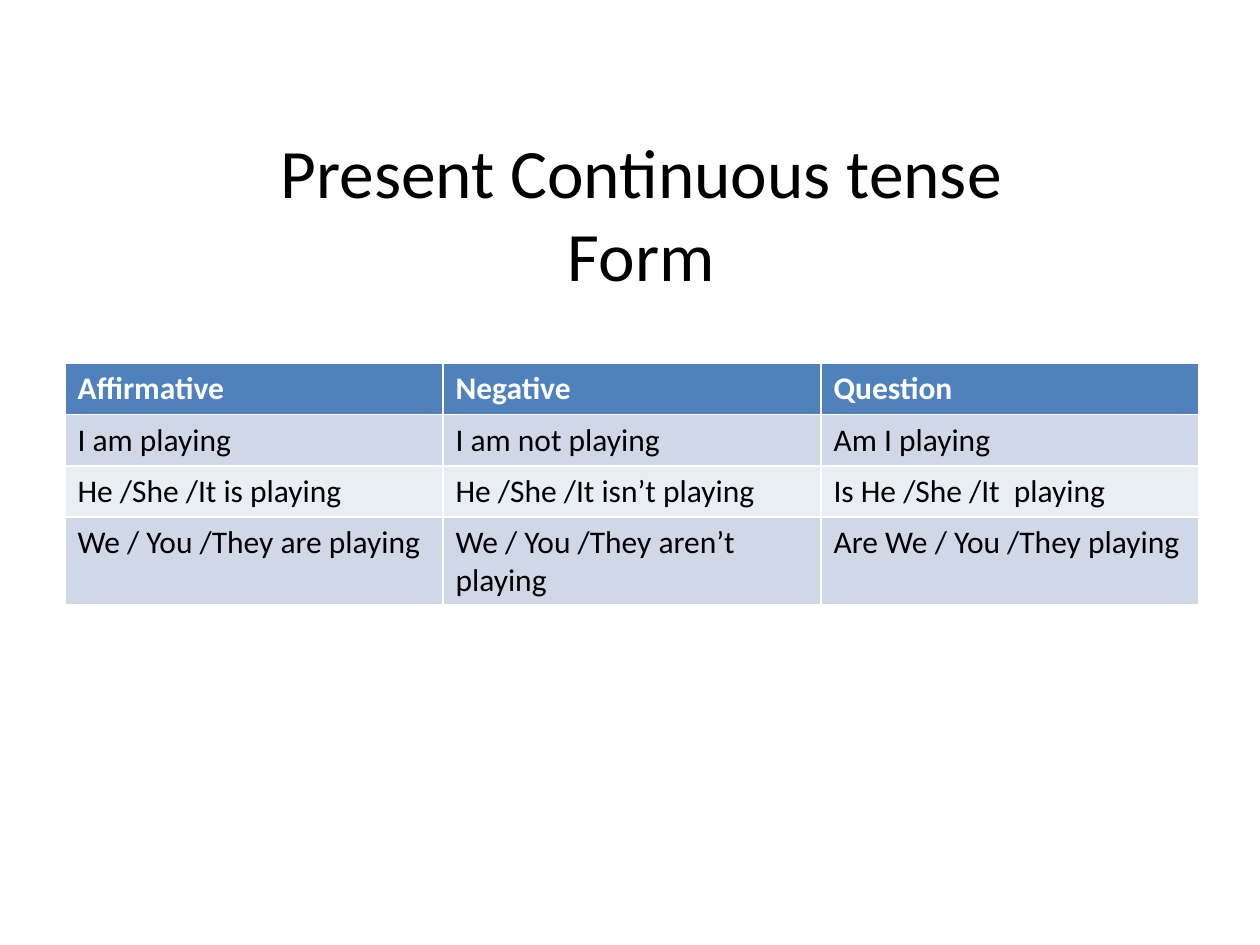
from dataclasses import dataclass

from pptx import Presentation
from pptx.dml.color import RGBColor
from pptx.enum.text import MSO_ANCHOR, PP_ALIGN
from pptx.util import Cm, Pt

TITLE = ["Present Continuous tense", "Form"]
ROWS = [
    ("Affirmative", "Negative", "Question"),
    ("I am playing", "I am not playing", "Am I playing"),
    ("He /She /It is playing", "He /She /It isn’t playing", "Is He /She /It  playing"),
    ("We / You /They are playing", "We / You /They aren’t playing",
     "Are We / You /They playing"),
]


@dataclass(frozen=True)
class Theme:
    font: str = "Calibri"
    title: float = 39.6
    body: float = 18
    ink: str = "000000"
    white: str = "FFFFFF"
    head: str = "4F81BD"
    bands: tuple = ("E9EDF4", "D0D8E8")


THEME = Theme()


def style(frame, size, color, bold=False):
    for para in frame.paragraphs:
        for run in para.runs:
            run.font.name = THEME.font
            run.font.size = Pt(size)
            run.font.bold = bold
            run.font.color.rgb = RGBColor.from_string(color)


def add_title(slide):
    box = slide.shapes.add_textbox(Cm(1.5), Cm(2.45), Cm(22.86), Cm(3.65))
    frame = box.text_frame
    frame.word_wrap = True
    frame.vertical_anchor = MSO_ANCHOR.MIDDLE
    frame.text = "\n".join(TITLE)
    for para in frame.paragraphs:
        para.alignment = PP_ALIGN.CENTER
    style(frame, THEME.title, THEME.ink)


def add_forms(slide):
    """Add the table of verb forms; the built-in table style draws its white borders."""
    high = Cm(1.03)
    table = slide.shapes.add_table(
        len(ROWS), len(ROWS[0]), Cm(1.31), Cm(7.33), Cm(22.86), high * len(ROWS)
    ).table
    for r, row in enumerate(ROWS):
        head = r == 0
        fill = THEME.head if head else THEME.bands[r % 2]
        for c, text in enumerate(row):
            cell = table.cell(r, c)
            cell.text_frame.text = text
            cell.fill.solid()
            cell.fill.fore_color.rgb = RGBColor.from_string(fill)
            style(cell.text_frame, THEME.body, THEME.white if head else THEME.ink, head)


def main():
    deck = Presentation()
    deck.slide_width, deck.slide_height = Cm(25.4), Cm(19.05)
    slide = deck.slides.add_slide(deck.slide_layouts[6])
    add_title(slide)
    add_forms(slide)
    deck.save("out.pptx")


if __name__ == "__main__":
    main()
